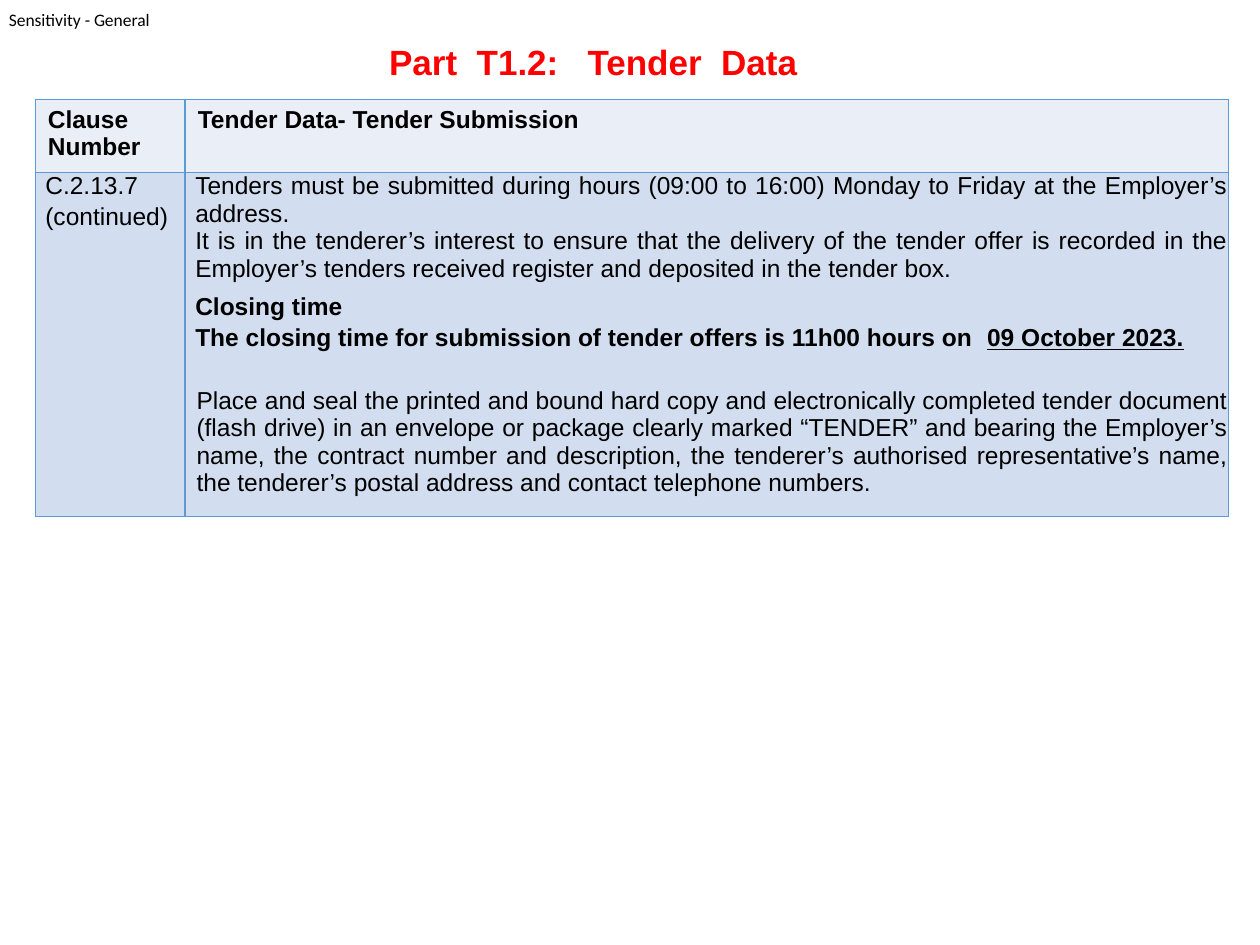
from lxml.etree import SubElement
from pptx import Presentation
from pptx.dml.color import RGBColor
from pptx.enum.text import MSO_ANCHOR, MSO_AUTO_SIZE, PP_ALIGN
from pptx.oxml.ns import qn
from pptx.util import Inches, Pt

COLORS = {"text": "000000", "title": "FF0000", "border": "5B9BD5",
          "header": "EAEFF7", "body": "D2DEEF"}
COL_WIDTHS = [1.19, 8.28]
ROW_HEIGHTS = [0.58, 2.73]

HEADERS = ["Clause Number", "Tender Data- Tender Submission"]
CLAUSE = [
    dict(text="C.2.13.7", after=2),
    dict(text="(continued)", after=2),
]
SUBMISSION = [
    dict(text="Tenders must be submitted during hours (09:00 to 16:00) Monday to "
              "Friday at the Employer’s address."),
    dict(text="It is in the tenderer’s interest to ensure that the delivery of the "
              "tender offer is recorded in the Employer’s tenders received register "
              "and deposited in the tender box.", after=6),
    dict(text="Closing time", after=2, bold=True),
    dict(text="The closing time for submission of tender offers is 11h00 hours on  ",
         underlined="09 October 2023.", after=2, bold=True),
    dict(text="Place and seal the printed and bound hard copy and electronically "
              "completed tender document (flash drive) in an envelope or package "
              "clearly marked “TENDER” and bearing the Employer’s name, the contract "
              "number and description, the tenderer’s authorised representative’s "
              "name, the tenderer’s postal address and contact telephone numbers.",
         before=18, after=2, indent=0.09),
]


def rgb(name):
    return RGBColor.from_string(COLORS[name])


def set_font(p, size, name="Arial", color="text", bold=False):
    font = p.font
    font.size, font.name, font.bold = Pt(size), name, bold
    font.color.rgb = rgb(color)


def zero_margins(box):
    box.margin_left = box.margin_right = box.margin_top = box.margin_bottom = 0


def add_marking(s, text):
    tf = s.shapes.add_textbox(Inches(0.07), Inches(0.07),
                              Inches(1.15), Inches(0.17)).text_frame
    zero_margins(tf)
    tf.word_wrap = True
    tf.text = text
    set_font(tf.paragraphs[0], 10, "Calibri")


def set_title(s, text):
    title = s.shapes.title
    title.left, title.top = Inches(2.98), Inches(0.27)
    title.width, title.height = Inches(3.46), Inches(0.44)
    tf = title.text_frame
    tf.text = text
    tf.word_wrap = False
    tf.auto_size = MSO_AUTO_SIZE.NONE
    tf.vertical_anchor = MSO_ANCHOR.TOP
    p = tf.paragraphs[0]
    p.alignment = PP_ALIGN.CENTER
    set_font(p, 20, color="title", bold=True)


def style_cell(cell, fill):
    tcPr = cell._tc.get_or_add_tcPr()
    for side in ("lnL", "lnR", "lnT", "lnB"):
        ln = SubElement(tcPr, qn(f"a:{side}"), w=str(Pt(1)))
        solid = SubElement(ln, qn("a:solidFill"))
        SubElement(solid, qn("a:srgbClr"), val=COLORS["border"])
    cell.fill.solid()
    cell.fill.fore_color.rgb = rgb(fill)


def fill_body_cell(cell, items, align):
    style_cell(cell, "body")
    zero_margins(cell)
    tf = cell.text_frame
    for i, item in enumerate(items):
        p = tf.add_paragraph() if i else tf.paragraphs[0]
        p._p.get_or_add_pPr().set("marL", str(Inches(item.get("indent", 0.08))))
        p.alignment = align
        p.space_before = Pt(item.get("before", 0))
        p.space_after = Pt(item.get("after", 0))
        p.add_run().text = item["text"]
        if "underlined" in item:
            r = p.add_run()
            r.text = item["underlined"]
            r.font.underline = True
        set_font(p, 14, bold=item.get("bold", False))


def add_tender_table(s):
    table = s.shapes.add_table(
        len(ROW_HEIGHTS), len(COL_WIDTHS), Inches(0.28), Inches(0.79),
        Inches(sum(COL_WIDTHS)), Inches(sum(ROW_HEIGHTS))).table
    table.first_row = table.horz_banding = False
    for col, width in zip(table.columns, COL_WIDTHS):
        col.width = Inches(width)
    for row, height in zip(table.rows, ROW_HEIGHTS):
        row.height = Inches(height)
    for cell, text in zip(table.rows[0].cells, HEADERS):
        style_cell(cell, "header")
        cell.text = text
        set_font(cell.text_frame.paragraphs[0], 14, bold=True)
    fill_body_cell(table.cell(1, 0), CLAUSE, PP_ALIGN.LEFT)
    fill_body_cell(table.cell(1, 1), SUBMISSION, PP_ALIGN.JUSTIFY)


def main():
    prs = Presentation()
    prs.slide_width, prs.slide_height = Inches(10), Inches(7.5)
    s = prs.slides.add_slide(prs.slide_layouts.get_by_name("Title Only"))
    add_marking(s, "Sensitivity - General")
    set_title(s, "Part  T1.2:   Tender  Data")
    add_tender_table(s)
    prs.save("out.pptx")


if __name__ == "__main__":
    main()
